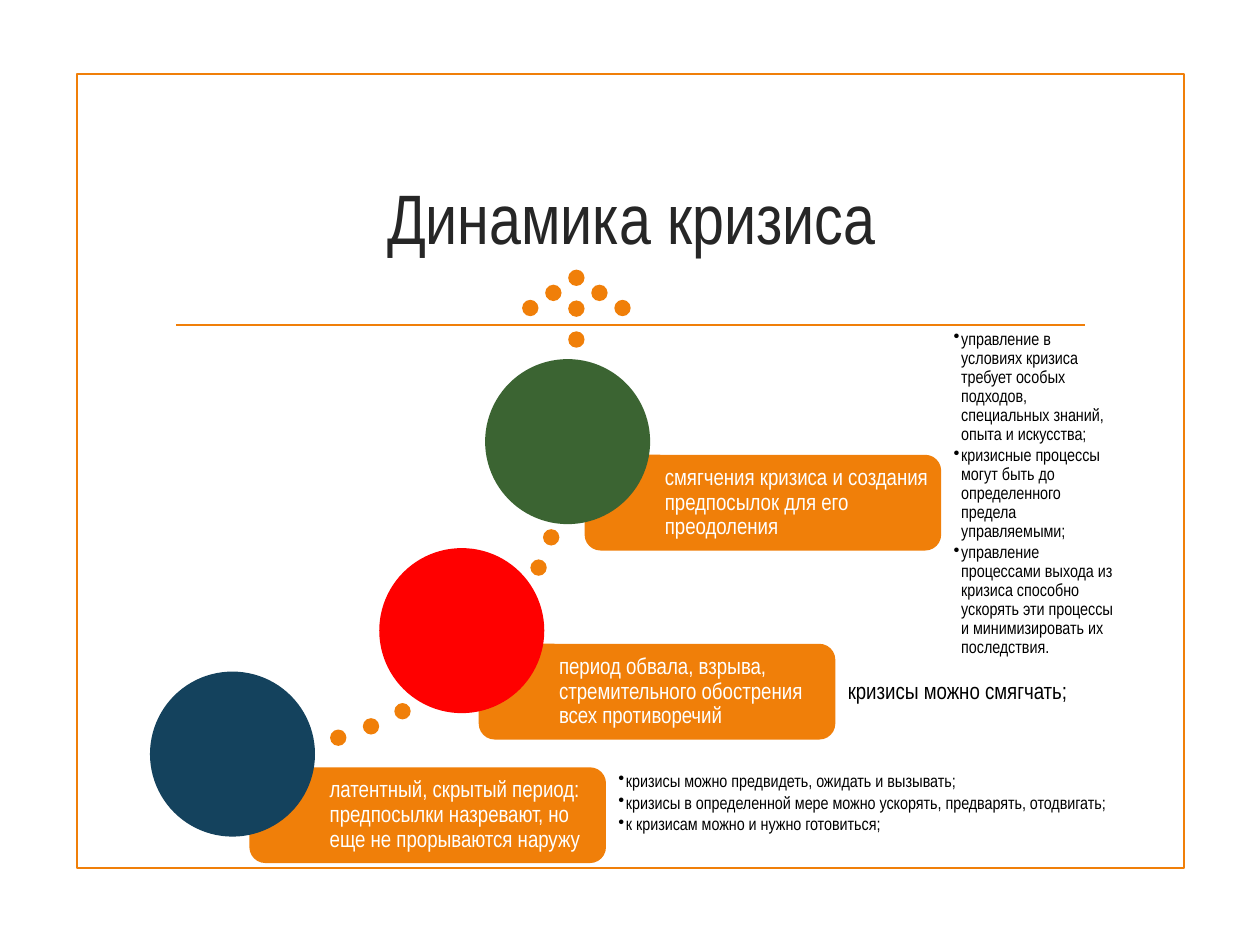
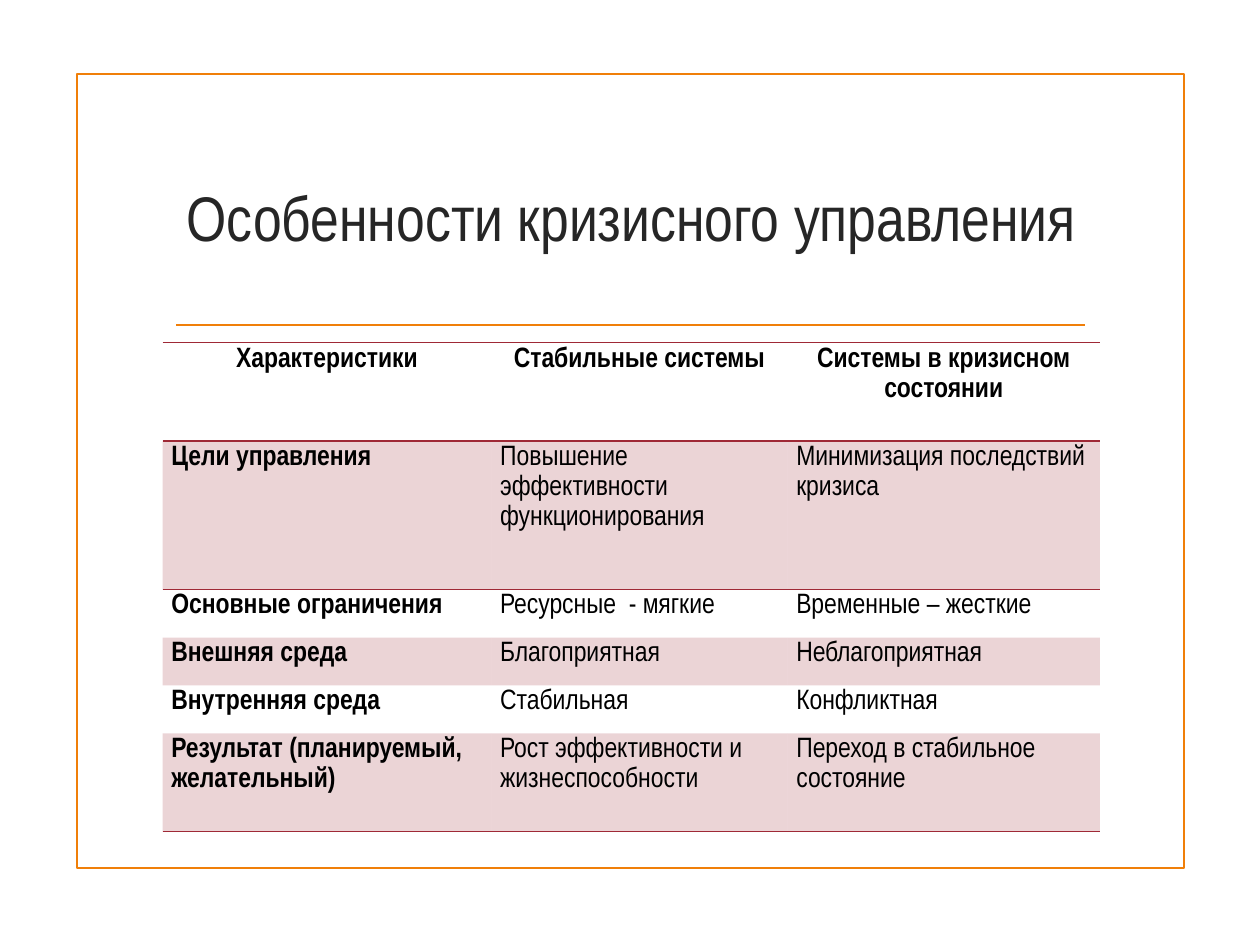
from lxml import etree
from pptx import Presentation
from pptx.dml.color import RGBColor as RGB
from pptx.enum.shapes import MSO_CONNECTOR as CONN, MSO_SHAPE as SHAPE
from pptx.enum.text import MSO_ANCHOR as ANCHOR, PP_ALIGN as ALIGN
from pptx.oxml.ns import qn
from pptx.util import Inches, Pt

COLORS = {"accent": "F07F09", "title": "262626", "text": "000000", "white": "FFFFFF",
          "rule": "9F2936", "latent": "14425D", "collapse": "FF0000", "easing": "3B6432"}
FONT = "Arial Narrow"
COLS, ROWS = 100, 75
PLAIN_TABLE = "{2D5ABB26-0587-4C30-8999-92F81FD0307C}"
FORMATS = {
    "title": ("title", {"size": Pt(40)}, {"alignment": ALIGN.CENTER}),
    "long_title": ("title", {"size": Pt(36)}, {"alignment": ALIGN.CENTER}),
    "label": ("white", {"size": Pt(13)}, {"alignment": ALIGN.LEFT, "line_spacing": 0.9}),
    "note": ("text", {"size": Pt(13)}, {"line_spacing": 0.9}),
    "bullet": ("text", {"size": Pt(10)}, {"line_spacing": 0.9, "space_after": Pt(1.5)}),
    "head": ("text", {"size": Pt(16), "bold": True},
             {"alignment": ALIGN.CENTER, "line_spacing": 1.15}),
    "row_name": ("text", {"size": Pt(16), "bold": True}, {"line_spacing": 1.15}),
    "cell": ("text", {"size": Pt(16), "bold": False}, {"line_spacing": 1.15}),
}
SIDES = ("margin_left", "margin_top", "margin_right", "margin_bottom")
LABEL_INSETS = (0.6, 0.05, 0.04, 0.05)
NOTE_INSETS = (0.1, 0.04, 0.04, 0.04)
CELL_INSETS = (0.07, 0, 0.07, 0)

LABEL_W, LABEL_H, CIRCLE, DOT = 28.3, 7.6, 13.1, 1.3
NOTE_RIGHT = 88.8
STAGES = [
    ("latent", 19.8, 60.9, "латентный, скрытый период: предпосылки назревают, но еще не прорываются наружу",
     (60.9, 7.6, ["кризисы можно предвидеть, ожидать и вызывать;",
                  "кризисы в определенной мере можно ускорять, предварять, отодвигать;",
                  "к кризисам можно и нужно готовиться;"])),
    ("collapse", 38, 51.1, "период обвала, взрыва, стремительного обострения всех противоречий",
     (51.1, 7.6, ["кризисы можно смягчать;"])),
    ("easing", 46.4, 36.1, "смягчения кризиса и создания предпосылок для его преодоления",
     (25.8, 28.2, ["управление в условиях кризиса требует особых подходов, специальных знаний, опыта и искусства;",
                   "кризисные процессы могут быть до определенного предела управляемыми;",
                   "управление процессами выхода из кризиса способно ускорять эти процессы и минимизировать их последствия."])),
]
PATH_DOTS = [(31.3, 55.8), (28.8, 57), (26.2, 57.9), (43.1, 42), (42.1, 44.4)]
ARROW_TIP = (45.1, 21.4)
TABLE_COLS = (26.1, 23.5, 24.8)
TABLE_ROWS = (7.8, 11.8, 3.8, 3.8, 3.8, 7.8)
TABLE = [
    ("Характеристики", "Стабильные системы", "Системы в кризисном состоянии"),
    ("Цели управления", "Повышение эффективности функционирования", "Минимизация последствий кризиса"),
    ("Основные ограничения", "Ресурсные  - мягкие", "Временные – жесткие"),
    ("Внешняя среда", "Благоприятная", "Неблагоприятная"),
    ("Внутренняя среда", "Стабильная", "Конфликтная"),
    ("Результат (планируемый, желательный)", "Рост эффективности и жизнеспособности",
     "Переход в стабильное состояние"),
]


def rgb(name):
    return RGB.from_string(COLORS[name])


def set_all(target, values):
    for key, value in values.items():
        setattr(target, key, value)


class Deck:
    """Draws styled elements on the current slide, on a grid of 100 columns by 75 rows."""

    def __init__(self):
        self.prs = Presentation()
        self.prs.slide_width, self.prs.slide_height = Inches(10), Inches(7.5)
        self.s = None

    def col(self, n):
        return round(self.prs.slide_width * n / COLS)

    def row(self, n):
        return round(self.prs.slide_height * n / ROWS)

    def box(self, x, y, w, h):
        return self.col(x), self.row(y), self.col(w), self.row(h)

    def slide(self, title, style):
        self.s = self.prs.slides.add_slide(self.prs.slide_layouts[6])
        self.shape(SHAPE.RECTANGLE, (6.1, 5.9, 87.9, 63), line="accent")
        self.line(14, 25.8, 86.1, 25.8)
        self.text((12.9, 10, 74.4, 14.3), [title], style, (0.1, 0.05, 0.1, 0.05))

    def shape(self, kind, at, fill=None, line=None):
        sp = self.s.shapes.add_shape(kind, *self.box(*at))
        sp.shadow.inherit = False
        if fill:
            sp.fill.solid()
            sp.fill.fore_color.rgb = rgb(fill)
        else:
            sp.fill.background()
        if line:
            sp.line.color.rgb, sp.line.width = rgb(line), Pt(1.25)
        else:
            sp.line.fill.background()
        return sp

    def line(self, x1, y1, x2, y2):
        ln = self.s.shapes.add_connector(CONN.STRAIGHT, self.col(x1), self.row(y1),
                                         self.col(x2), self.row(y2))
        ln.line.color.rgb, ln.line.width = rgb("accent"), Pt(1.25)
        etree.SubElement(ln._element.spPr, qn("a:effectLst"))

    def dot(self, x, y):
        self.shape(SHAPE.OVAL, (x, y, DOT, DOT), "accent")

    def text(self, at, lines, style, insets, anchor=ANCHOR.MIDDLE):
        sp = self.s.shapes.add_textbox(*self.box(*at))
        self.fill_frame(sp.text_frame, lines, style, insets, anchor)

    def fill_frame(self, tf, lines, style, insets, anchor=ANCHOR.MIDDLE):
        set_all(tf, {"word_wrap": True, "vertical_anchor": anchor})
        set_all(tf, {side: Inches(v) for side, v in zip(SIDES, insets)})
        for i, line in enumerate(lines):
            p = tf.paragraphs[0] if i == 0 else tf.add_paragraph()
            self.paragraph(p, line, style)

    def paragraph(self, p, line, style):
        color, font, layout = FORMATS[style]
        set_all(p, layout)
        if style == "bullet":
            pPr = p._p.get_or_add_pPr()
            pPr.set("marL", str(Inches(0.06)))
            pPr.set("indent", str(-Inches(0.06)))
            etree.SubElement(pPr, qn("a:buChar"), char="•")
        r = p.add_run()
        r.text = line
        set_all(r.font, {"name": FONT, **font})
        r.font.color.rgb = rgb(color)

    def stage(self, color, x, y, label, note):
        sp = self.shape(SHAPE.ROUNDED_RECTANGLE, (x, y, LABEL_W, LABEL_H), "accent")
        self.fill_frame(sp.text_frame, [label], "label", LABEL_INSETS)
        top, height, lines = note
        left = x + LABEL_W
        style, anchor = ("bullet", ANCHOR.TOP) if len(lines) > 1 else ("note", ANCHOR.MIDDLE)
        self.text((left, top, NOTE_RIGHT - left, height), lines, style, NOTE_INSETS, anchor)
        self.shape(SHAPE.OVAL, (x - 7.9, y - 7.6, CIRCLE, CIRCLE), color)

    def table(self, x, y, cols, rows, data):
        frame = self.s.shapes.add_table(len(rows), len(cols),
                                        *self.box(x, y, sum(cols), sum(rows)))
        tbl = frame.table
        tbl.horz_banding = False
        tbl._tbl.tblPr.find(qn("a:tableStyleId")).text = PLAIN_TABLE
        for column, w in zip(tbl.columns, cols):
            column.width = self.col(w)
        for i, h in enumerate(rows):
            tbl.rows[i].height = self.row(h)
            for j, value in enumerate(data[i]):
                cell = tbl.cell(i, j)
                style = "head" if i == 0 else "cell" if j else "row_name"
                set_all(cell, {side: Inches(v) for side, v in zip(SIDES, CELL_INSETS)})
                self.paragraph(cell.text_frame.paragraphs[0], value, style)
                edges = {0: ("lnT", "lnB"), 1: ("lnT",), len(rows) - 1: ("lnB",)}
                self.cell_look(cell, edges.get(i, ()), i % 2 == 1)

    def cell_look(self, cell, edges, shaded):
        tcPr = cell._tc.get_or_add_tcPr()
        for edge in edges:
            ln = etree.SubElement(tcPr, qn(f"a:{edge}"), w=str(Pt(1)))
            fill = etree.SubElement(ln, qn("a:solidFill"))
            etree.SubElement(fill, qn("a:srgbClr"), val=COLORS["rule"])
        if not shaded:
            cell.fill.background()
            return
        cell.fill.solid()
        cell.fill.fore_color.rgb = rgb("rule")
        clr = tcPr.find(f"{qn('a:solidFill')}/{qn('a:srgbClr')}")
        etree.SubElement(clr, qn("a:alpha"), val="20000")


def main():
    deck = Deck()

    deck.slide("Динамика кризиса", "title")
    for x, y in PATH_DOTS:
        deck.dot(x, y)
    tip_x, tip_y = ARROW_TIP
    for step in range(-2, 3):
        deck.dot(tip_x + 1.83 * step, tip_y + 1.2 * abs(step))
    for step in (1, 2):
        deck.dot(tip_x, tip_y + 2.45 * step)
    for stage in STAGES:
        deck.stage(*stage)

    deck.slide("Особенности кризисного управления", "long_title")
    deck.table(12.9, 27.2, TABLE_COLS, TABLE_ROWS, TABLE)

    deck.prs.save("out.pptx")


if __name__ == "__main__":
    main()
